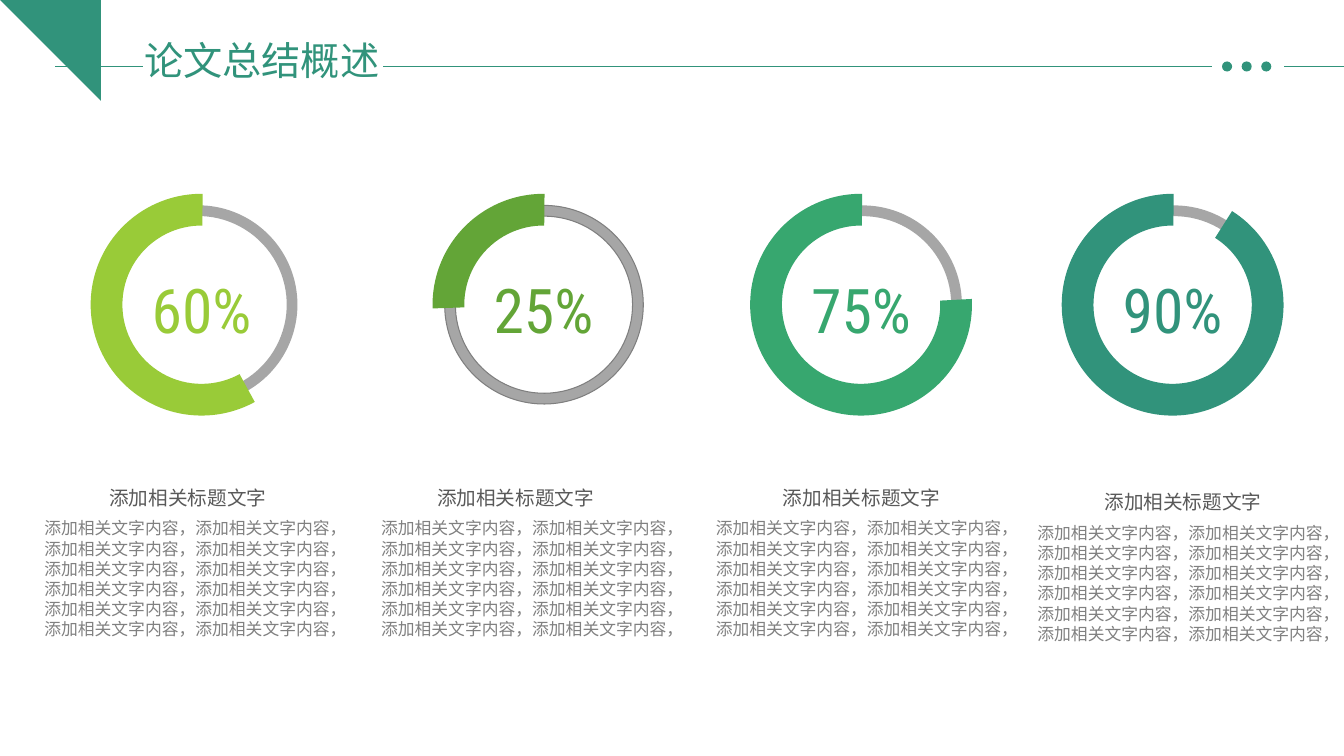
from lxml.etree import SubElement
from pptx import Presentation
from pptx.dml.color import RGBColor
from pptx.enum.shapes import MSO_CONNECTOR, MSO_SHAPE
from pptx.enum.text import MSO_AUTO_SIZE, PP_ALIGN
from pptx.oxml.ns import qn
from pptx.util import Inches, Pt

TITLE = "论文总结概述"
HEADING = "添加相关标题文字"
BODY = ["添加相关文字内容，添加相关文字内容，"] * 6
COLORS = {
    "teal": "31937B", "lime": "99CB38", "green": "63A537", "jade": "37A76F",
    "track": "A6A6A6", "track_edge": "7F7F7F", "heading": "595959", "body": "808080",
}
CJK_FONT = "Noto Sans CJK SC"
WIDTH, HEIGHT = 13.33, 7.5

# Horizontal places are percentages of the slide width, angles are degrees.
COLUMNS = [
    dict(value="60%", color="lime", ring=15.0, track=14.74, heading=13.99, body=3.3,
         arc_start=61.33, track_arc=(269.5, 62.22), track_turn=35.6, edge=None, drop=0),
    dict(value="25%", color="green", ring=40.44, track=40.47, heading=38.37, body=28.36,
         arc_start=178.07, track_arc=(265.66, 179.92), track_turn=153.3, edge="track_edge", drop=0),
    dict(value="75%", color="jade", ring=64.07, track=64.18, heading=64.1, body=53.26,
         arc_start=357.04, track_arc=(265.66, 179.92), track_turn=153.3, edge=None, drop=0),
    dict(value="90%", color="teal", ring=87.25, track=87.36, heading=88.03, body=77.19,
         arc_start=302.41, track_arc=(265.66, 179.92), track_turn=153.3, edge=None, drop=0.6),
]
ARC_END, ARC_TURN = 270.56, 243.5
RING_SIZE, RING_BAND = 2.2, 0.143
TRACK_SIZE, TRACK_BAND = 1.97, 0.054
RING_ROW, VALUE_ROW, HEADING_ROW, BODY_ROW, RULE_ROW = 40.3, 35.33, 64.27, 68.53, 8.8
RULES = [(28.51, 90.17), (4.13, 10.65), (95.57, 100)]
DOTS = [91.3 + 1.46 * step for step in range(3)]
DOT_SIZE = 0.1

CAP_BASE_CURVE = [(0.51, 0.68), (0.51, 0.85), (1.01, 0.85), (1.01, 0.68)]
CAP_BASE_TOP = [(1.01, 0.55), (1.0, 0.53), (0.99, 0.53), (0.78, 0.64), (0.76, 0.65),
                (0.75, 0.64), (0.53, 0.53), (0.52, 0.53), (0.51, 0.55)]
CAP_BOARD = [
    (0.41, 0.46), (0.41, 0.58), (0.42, 0.59), (0.43, 0.61), (0.43, 0.65), (0.45, 0.71),
    (0.45, 0.79), (0.42, 0.84), (0.42, 0.8), (0.4, 0.85), (0.4, 0.8), (0.39, 0.8),
    (0.39, 0.83), (0.38, 0.81), (0.38, 0.84), (0.35, 0.79), (0.35, 0.72), (0.38, 0.65),
    (0.37, 0.61), (0.39, 0.58), (0.39, 0.43), (0.31, 0.39), (0.3, 0.38), (0.31, 0.36),
    (0.75, 0.19), (0.77, 0.19), (1.21, 0.36), (1.22, 0.38), (1.21, 0.39), (0.78, 0.62),
    (0.765, 0.63), (0.75, 0.62), (0.43, 0.45),
]


def across(share):
    return WIDTH * share / 100


def down(share):
    return HEIGHT * share / 100


def rgb(name):
    return RGBColor.from_string(COLORS[name])


def paint(shape, color, edge=None):
    shape.shadow.inherit = False
    shape.fill.solid()
    shape.fill.fore_color.rgb = rgb(color)
    if edge:
        shape.line.color.rgb = rgb(edge)
        shape.line.width = Pt(0.75)
    else:
        shape.line.fill.background()


def add_centred(slide, kind, center, middle, size, color, edge=None):
    shape = slide.shapes.add_shape(kind, Inches(center - size / 2), Inches(middle - size / 2),
                                   Inches(size), Inches(size))
    paint(shape, color, edge)
    return shape


def add_arc(slide, center, size, band, start, end, turn, color, edge=None):
    arc = add_centred(slide, MSO_SHAPE.BLOCK_ARC, center, down(RING_ROW), size, color, edge)
    arc.rotation = turn
    for index, angle in enumerate((start, end)):
        arc.adjustments[index] = (angle - turn) % 360 * 0.6
    arc.adjustments[2] = band


def add_text(slide, left, top, width, height, lines, size, font, color,
             align=PP_ALIGN.LEFT, inset=True, spacing=None):
    box = slide.shapes.add_textbox(Inches(left), Inches(top), Inches(width), Inches(height))
    frame = box.text_frame
    frame.word_wrap = False
    frame.auto_size = MSO_AUTO_SIZE.SHAPE_TO_FIT_TEXT
    if not inset:
        frame.margin_left = frame.margin_top = frame.margin_right = frame.margin_bottom = 0
    for index, line in enumerate(lines):
        paragraph = frame.add_paragraph() if index else frame.paragraphs[0]
        paragraph.alignment = align
        paragraph.line_spacing = spacing
        run = paragraph.add_run()
        run.text = line
        run.font.size = Pt(size)
        run.font.name = font
        run.font.color.rgb = rgb(color)
        SubElement(run.font._element, qn("a:ea")).set("typeface", CJK_FONT)


def curve_points(a, b, c, d, steps=24):
    for step in range(steps + 1):
        t = step / steps
        weights = ((1 - t) ** 3, 3 * t * (1 - t) ** 2, 3 * t * t * (1 - t), t ** 3)
        yield tuple(sum(w * p[axis] for w, p in zip(weights, (a, b, c, d))) for axis in (0, 1))


def add_cap(slide):
    base = list(curve_points(*CAP_BASE_CURVE)) + CAP_BASE_TOP
    builder = slide.shapes.build_freeform(*base[0], scale=Inches(1))
    builder.add_line_segments(base[1:], close=True)
    builder.move_to(*CAP_BOARD[0])
    builder.add_line_segments(CAP_BOARD[1:], close=True)
    paint(builder.convert_to_shape(), "teal")


def add_header(slide):
    add_cap(slide)
    add_text(slide, across(10), 0.17, 2.56, 0.66, [TITLE], 28, CJK_FONT, "teal", spacing=1.3)
    level = Inches(down(RULE_ROW))
    for start, end in RULES:
        rule = slide.shapes.add_connector(MSO_CONNECTOR.STRAIGHT, Inches(across(start)), level,
                                          Inches(across(end)), level)
        rule.line.color.rgb = rgb("teal")
        rule.line.width = Pt(0.5)
        SubElement(rule._element.spPr, qn("a:effectLst"))
    for dot in DOTS:
        add_centred(slide, MSO_SHAPE.OVAL, across(dot), down(RULE_ROW), DOT_SIZE, "teal")


def add_column(slide, column):
    center = across(column["ring"])
    add_arc(slide, across(column["track"]), TRACK_SIZE, TRACK_BAND, *column["track_arc"],
            column["track_turn"], "track", column["edge"])
    add_arc(slide, center, RING_SIZE, RING_BAND, column["arc_start"], ARC_END, ARC_TURN,
            column["color"])
    add_text(slide, center - 0.65, down(VALUE_ROW), 1.3, 0.84, [column["value"]], 44,
             "Roboto Condensed", column["color"], PP_ALIGN.CENTER)
    add_text(slide, across(column["body"]), down(BODY_ROW + column["drop"]), 3.03, 1.21, BODY,
             12, "Arial", "body", inset=False)
    add_text(slide, across(column["heading"]) - 0.785, down(HEADING_ROW + column["drop"]),
             1.57, 0.24, [HEADING], 14, "Arial", "heading", PP_ALIGN.CENTER, inset=False)


def main():
    deck = Presentation()
    deck.slide_width, deck.slide_height = Inches(WIDTH), Inches(HEIGHT)
    slide = deck.slides.add_slide(deck.slide_layouts[6])
    add_header(slide)
    for column in COLUMNS:
        add_column(slide, column)
    deck.save("out.pptx")


if __name__ == "__main__":
    main()
